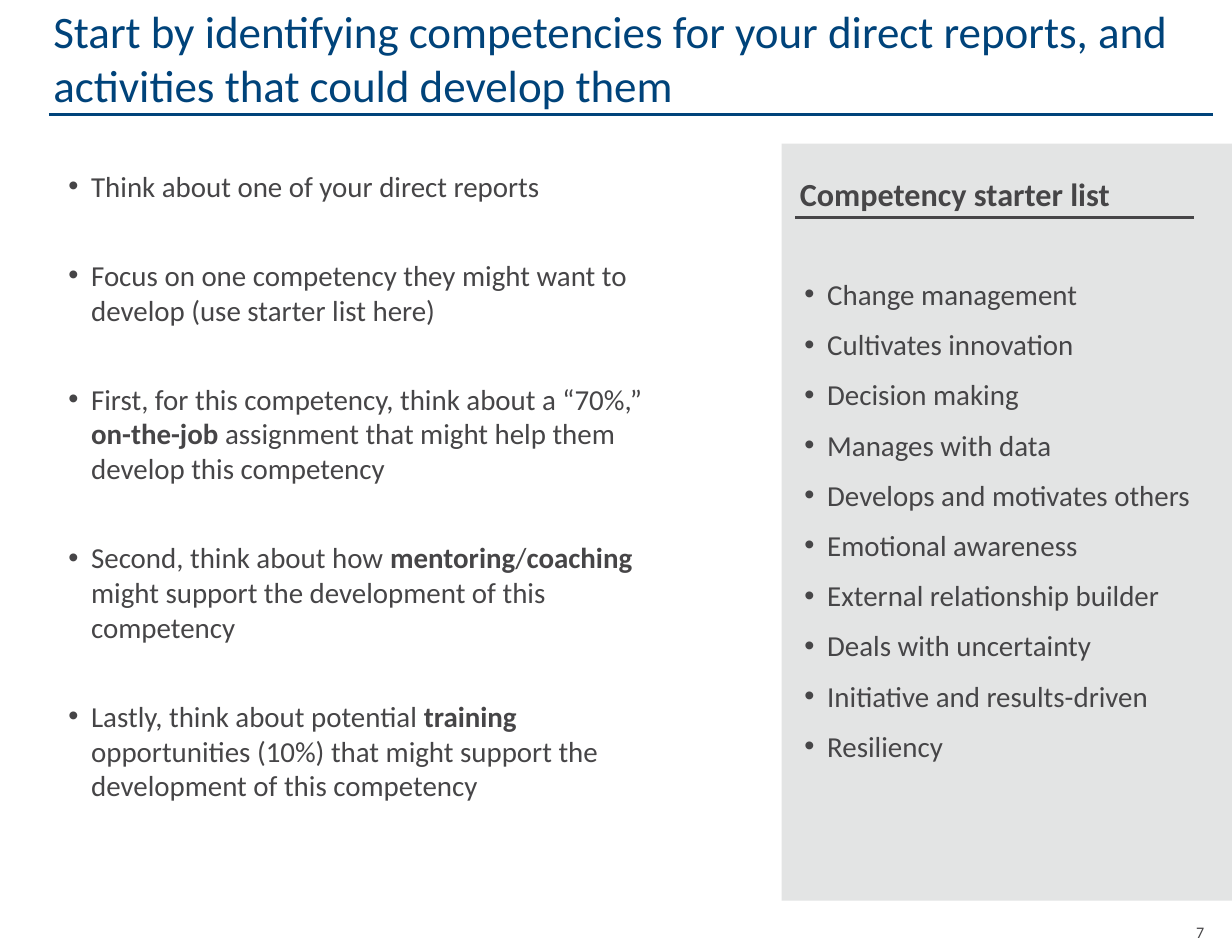
from dataclasses import dataclass

from lxml.etree import SubElement
from pptx import Presentation
from pptx.dml.color import RGBColor
from pptx.enum.shapes import MSO_CONNECTOR as Connector, MSO_SHAPE as Shape
from pptx.enum.text import MSO_ANCHOR as Anchor, PP_ALIGN as Align
from pptx.oxml.ns import qn
from pptx.util import Cm, Pt


@dataclass(frozen=True)
class Theme:
    font: str = "Calibri"
    blue: RGBColor = RGBColor(0x00, 0x43, 0x7A)
    grey: RGBColor = RGBColor(0x46, 0x45, 0x47)
    panel: RGBColor = RGBColor(0xE3, 0xE4, 0xE4)
    title_size: int = 28
    heading_size: int = 20
    body_size: int = 18
    number_size: int = 10


theme = Theme()


def write(shape, lines, size, color, margins, anchor=Anchor.TOP,
          align=Align.LEFT, bold=None, bullet_gap=None):
    """Fill a shape with paragraphs; **marks** enclose bold words."""
    frame = shape.text_frame
    frame.word_wrap = True
    frame.vertical_anchor = anchor
    (frame.margin_left, frame.margin_top,
     frame.margin_right, frame.margin_bottom) = [Cm(margin) for margin in margins]
    for index, line in enumerate(lines):
        paragraph = frame.paragraphs[0] if index == 0 else frame.add_paragraph()
        paragraph.alignment = align
        if bullet_gap is not None:
            properties = paragraph._p.get_or_add_pPr()
            properties.set("marL", str(Cm(0.5)))
            properties.set("indent", str(-Cm(0.5)))
            SubElement(properties, qn("a:buFont")).set("typeface", "Arial")
            SubElement(properties, qn("a:buChar")).set("char", "•")
            if index > 0:
                paragraph.space_before = Pt(bullet_gap)
        paragraph.font.name = theme.font
        paragraph.font.size = Pt(size)
        paragraph.font.color.rgb = color
        paragraph.font.bold = bold
        for part, words in enumerate(line.split("**")):
            if words:
                run = paragraph.add_run()
                run.text = words
                if part % 2:
                    run.font.bold = True


def add_rule(left, right, top, color, width):
    rule = slide.shapes.add_connector(
        Connector.STRAIGHT, Cm(left), Cm(top), Cm(right), Cm(top))
    rule.line.color.rgb = color
    rule.line.width = Pt(width)
    SubElement(rule._element.spPr, qn("a:effectLst"))


presentation = Presentation()
presentation.slide_width = Cm(27.03)
presentation.slide_height = Cm(20.68)
slide = presentation.slides.add_slide(presentation.slide_layouts[6])

# Title and its rule
title = slide.shapes.add_textbox(Cm(1.07), Cm(0), Cm(25.55), Cm(2.64))
write(title,
      ["Start by identifying competencies for your direct reports, "
       "and activities that could develop them"],
      theme.title_size, theme.blue, (0.1, 0.1, 0.1, 0.2), Anchor.BOTTOM)
add_rule(1.07, 26.62, 2.51, theme.blue, 2.25)

# Steps
steps = [
    "Think about one of your direct reports",
    "Focus on one competency they might want to develop (use starter list here)",
    "First, for this competency, think about a “70%,” **on-the-job** assignment "
    "that might help them develop this competency",
    "Second, think about how **mentoring**/**coaching** might support "
    "the development of this competency",
    "Lastly, think about potential **training** opportunities (10%) "
    "that might support the development of this competency",
]
steps_box = slide.shapes.add_textbox(Cm(1.37), Cm(3.56), Cm(12.88), Cm(14.27))
write(steps_box, steps, theme.body_size, theme.grey,
      (0.13, 0.13, 0.13, 0.13), bullet_gap=33.8)

# Competency panel
competencies = [
    "Change management",
    "Cultivates innovation",
    "Decision making",
    "Manages with data",
    "Develops and motivates others",
    "Emotional awareness",
    "External relationship builder",
    "Deals with uncertainty",
    "Initiative and results-driven",
    "Resiliency",
]
panel = slide.shapes.add_shape(
    Shape.RECTANGLE, Cm(17.15), Cm(3.15), Cm(9.88), Cm(16.6))
panel.shadow.inherit = False
panel.fill.solid()
panel.fill.fore_color.rgb = theme.panel
panel.line.fill.background()
write(panel, competencies, theme.body_size, theme.grey,
      (0.5, 0, 0.1, 0.1), Anchor.MIDDLE, bullet_gap=9.6)

# Panel heading and its rule
heading = slide.shapes.add_textbox(Cm(17.45), Cm(3.73), Cm(8.74), Cm(1.04))
write(heading, ["Competency starter list"], theme.heading_size, theme.grey,
      (0.1, 0.1, 0.1, 0.1), Anchor.BOTTOM, bold=True)
add_rule(17.45, 26.19, 4.77, theme.grey, 1.75)

# Slide number
number = slide.shapes.add_textbox(Cm(26.01), Cm(20.22), Cm(0.41), Cm(0.43))
write(number, ["7"], theme.number_size, theme.grey,
      (0, 0, 0, 0), Anchor.MIDDLE, Align.RIGHT)

presentation.save("out.pptx")
